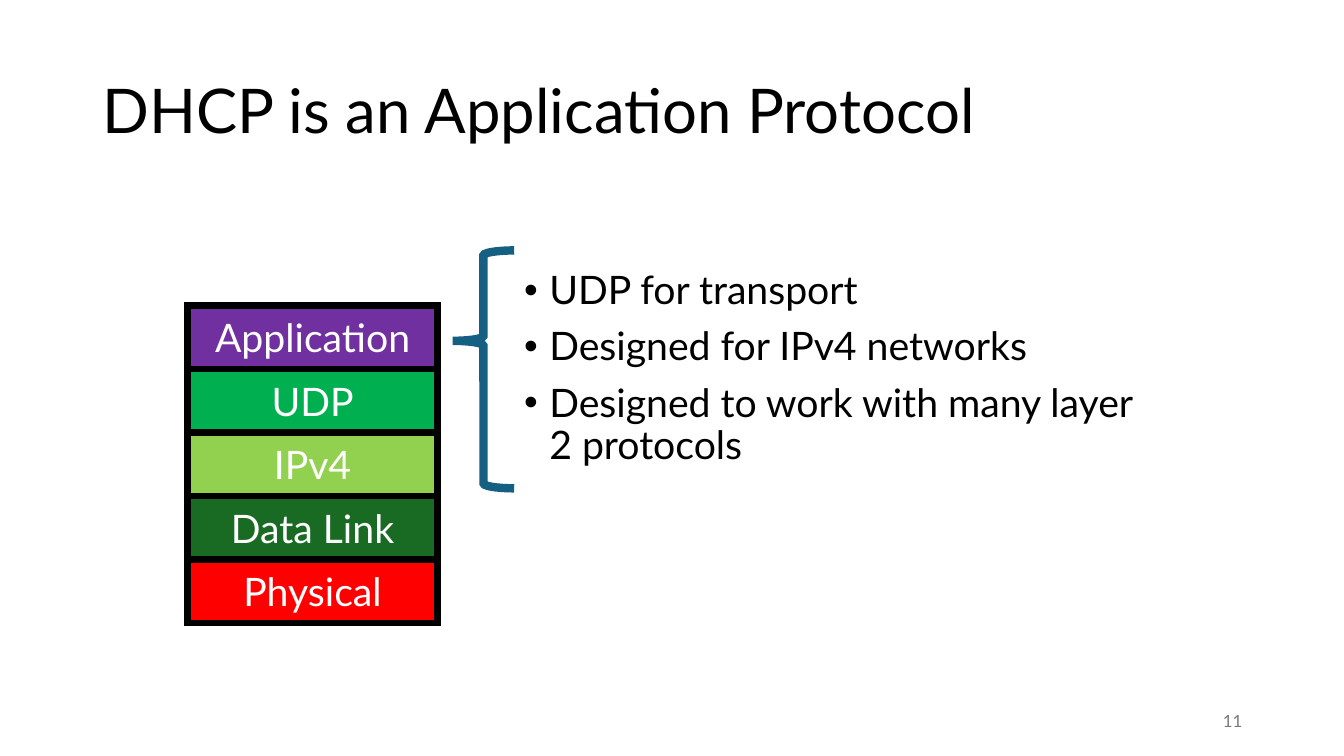
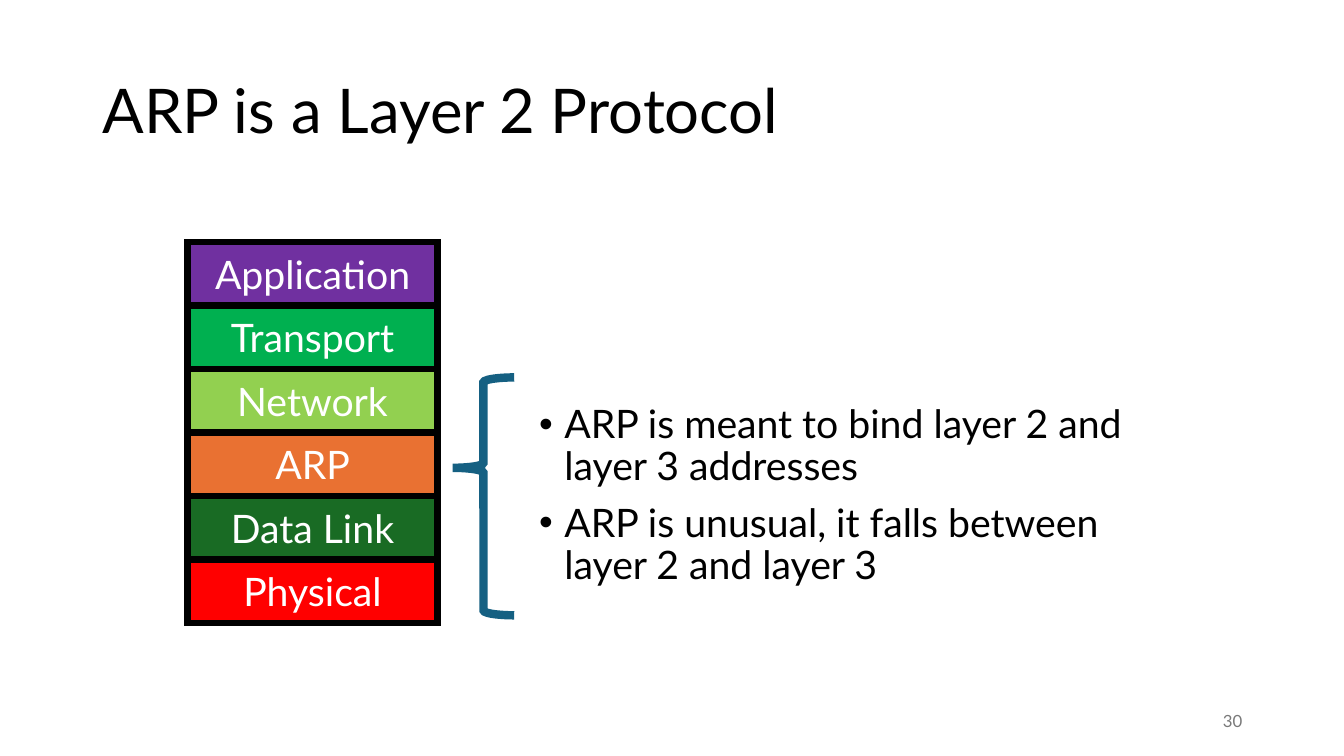
from dataclasses import dataclass

from lxml import etree
from pptx import Presentation
from pptx import util as u
from pptx.dml import color
from pptx.enum import shapes, text
from pptx.oxml import ns

FONT = "Lato"
COLORS = {
    "ink": "000000",
    "white": "FFFFFF",
    "number": "797979",
    "brace": "156082",
    "application": "7030A0",
    "transport": "00B050",
    "network": "92D050",
    "arp": "E97132",
    "data_link": "196B24",
    "physical": "FF0000",
}
SLIDE_WIDTH, SLIDE_HEIGHT = 13.33, 7.5
STACK_LEFT, STACK_BOTTOM = 1.86, 6.18
LAYER_WIDTH, LAYER_HEIGHT = 2.48, 0.63
BRACE_LEFT, BRACE_WIDTH, BRACE_HEIGHT = 4.49, 0.61, 2.36
BRACE_CURVE, BRACE_TIP = 0.08, 0.38
BRACE_RISE = 0.86
BODY_WIDTH, BODY_INDENT = 6.4, 0.25


@dataclass(frozen=True)
class Box:
    left: float
    top: float
    width: float
    height: float

    def lengths(self) -> tuple[u.Length, ...]:
        return tuple(u.Inches(n) for n in (self.left, self.top, self.width, self.height))


@dataclass(frozen=True)
class TextStyle:
    size: int
    color: str = "ink"
    align: text.PP_ALIGN = text.PP_ALIGN.LEFT
    line_spacing: float = 1.0
    space_before: int = 0
    bullet: str = ""


@dataclass(frozen=True)
class Layer:
    name: str
    color: str


@dataclass(frozen=True)
class ProtocolSlide:
    title: str
    number: int
    layers: tuple[Layer, ...]
    explained: int
    body: tuple[str, ...]
    body_left: float


TITLE = TextStyle(44, line_spacing=0.9)
NUMBER = TextStyle(12, "number", text.PP_ALIGN.RIGHT)
BODY = TextStyle(28, line_spacing=0.9, space_before=10, bullet="•")
LAYER = TextStyle(28, "white", text.PP_ALIGN.CENTER)
TITLE_BOX = Box(0.92, 0.4, 11.5, 1.45)
NUMBER_BOX = Box(9.42, 6.95, 3, 0.4)

APPLICATION = Layer("Application", "application")
LOWER_LAYERS = (Layer("Data Link", "data_link"), Layer("Physical", "physical"))

SLIDES = (
    ProtocolSlide(
        "DHCP is an Application Protocol",
        11,
        (APPLICATION, Layer("UDP", "transport"), Layer("IPv4", "network"), *LOWER_LAYERS),
        0,
        (
            "UDP for transport",
            "Designed for IPv4 networks",
            "Designed to work with many layer 2 protocols",
        ),
        5.1,
    ),
    ProtocolSlide(
        "ARP is a Layer 2 Protocol",
        30,
        (
            APPLICATION,
            Layer("Transport", "transport"),
            Layer("Network", "network"),
            Layer("ARP", "arp"),
            *LOWER_LAYERS,
        ),
        3,
        (
            "ARP is meant to bind layer 2 and layer 3 addresses",
            "ARP is unusual, it falls between layer 2 and layer 3",
        ),
        5.25,
    ),
)


def rgb(name: str) -> color.RGBColor:
    return color.RGBColor.from_string(COLORS[name])


def add_bullet(paragraph, character: str) -> None:
    properties = paragraph._p.get_or_add_pPr()
    properties.set("marL", str(u.Inches(BODY_INDENT)))
    properties.set("indent", str(-u.Inches(BODY_INDENT)))
    etree.SubElement(properties, ns.qn("a:buFont"), typeface="Arial")
    etree.SubElement(properties, ns.qn("a:buChar"), char=character)


def write(shape, lines: tuple[str, ...], style: TextStyle) -> None:
    frame = shape.text_frame
    frame.word_wrap = True
    frame.vertical_anchor = text.MSO_ANCHOR.MIDDLE
    for index, line in enumerate(lines):
        paragraph = frame.add_paragraph() if index else frame.paragraphs[0]
        paragraph.alignment = style.align
        paragraph.line_spacing = style.line_spacing
        paragraph.space_before = u.Pt(style.space_before)
        if style.bullet:
            add_bullet(paragraph, style.bullet)
        run = paragraph.add_run()
        run.text = line
        run.font.name = FONT
        run.font.size = u.Pt(style.size)
        run.font.color.rgb = rgb(style.color)


def add_text(slide, box: Box, lines: tuple[str, ...], style: TextStyle) -> None:
    write(slide.shapes.add_textbox(*box.lengths()), lines, style)


def add_outlined(slide, kind: shapes.MSO_SHAPE, box: Box, line_color: str, weight: float):
    shape = slide.shapes.add_shape(kind, *box.lengths())
    shape.shadow.inherit = False
    shape.line.color.rgb = rgb(line_color)
    shape.line.width = u.Pt(weight)
    outline = shape._element.spPr.find(ns.qn("a:ln"))
    etree.SubElement(outline, ns.qn("a:miter"), lim="800000")
    return shape


def add_layer(slide, layer: Layer, top: float) -> None:
    box = Box(STACK_LEFT, top, LAYER_WIDTH, LAYER_HEIGHT)
    shape = add_outlined(slide, shapes.MSO_SHAPE.RECTANGLE, box, "ink", 4.5)
    shape.fill.solid()
    shape.fill.fore_color.rgb = rgb(layer.color)
    write(shape, (layer.name,), LAYER)


def add_brace(slide, top: float) -> None:
    box = Box(BRACE_LEFT, top, BRACE_WIDTH, BRACE_HEIGHT)
    brace = add_outlined(slide, shapes.MSO_SHAPE.LEFT_BRACE, box, "brace", 6)
    brace.fill.background()
    brace.adjustments[0] = BRACE_CURVE
    brace.adjustments[1] = BRACE_TIP


def add_protocol_slide(presentation, content: ProtocolSlide) -> None:
    slide = presentation.slides.add_slide(presentation.slide_layouts[6])
    add_text(slide, TITLE_BOX, (content.title,), TITLE)
    add_text(slide, NUMBER_BOX, (str(content.number),), NUMBER)

    stack_top = STACK_BOTTOM - len(content.layers) * LAYER_HEIGHT
    for row, layer in enumerate(content.layers):
        add_layer(slide, layer, stack_top + row * LAYER_HEIGHT)

    brace_top = stack_top + (content.explained + 0.5) * LAYER_HEIGHT - BRACE_RISE
    add_brace(slide, brace_top)
    body_box = Box(content.body_left, brace_top, BODY_WIDTH, BRACE_HEIGHT)
    add_text(slide, body_box, content.body, BODY)


def main() -> None:
    presentation = Presentation()
    presentation.slide_width = u.Inches(SLIDE_WIDTH)
    presentation.slide_height = u.Inches(SLIDE_HEIGHT)
    for content in SLIDES:
        add_protocol_slide(presentation, content)
    presentation.save("out.pptx")


if __name__ == "__main__":
    main()
